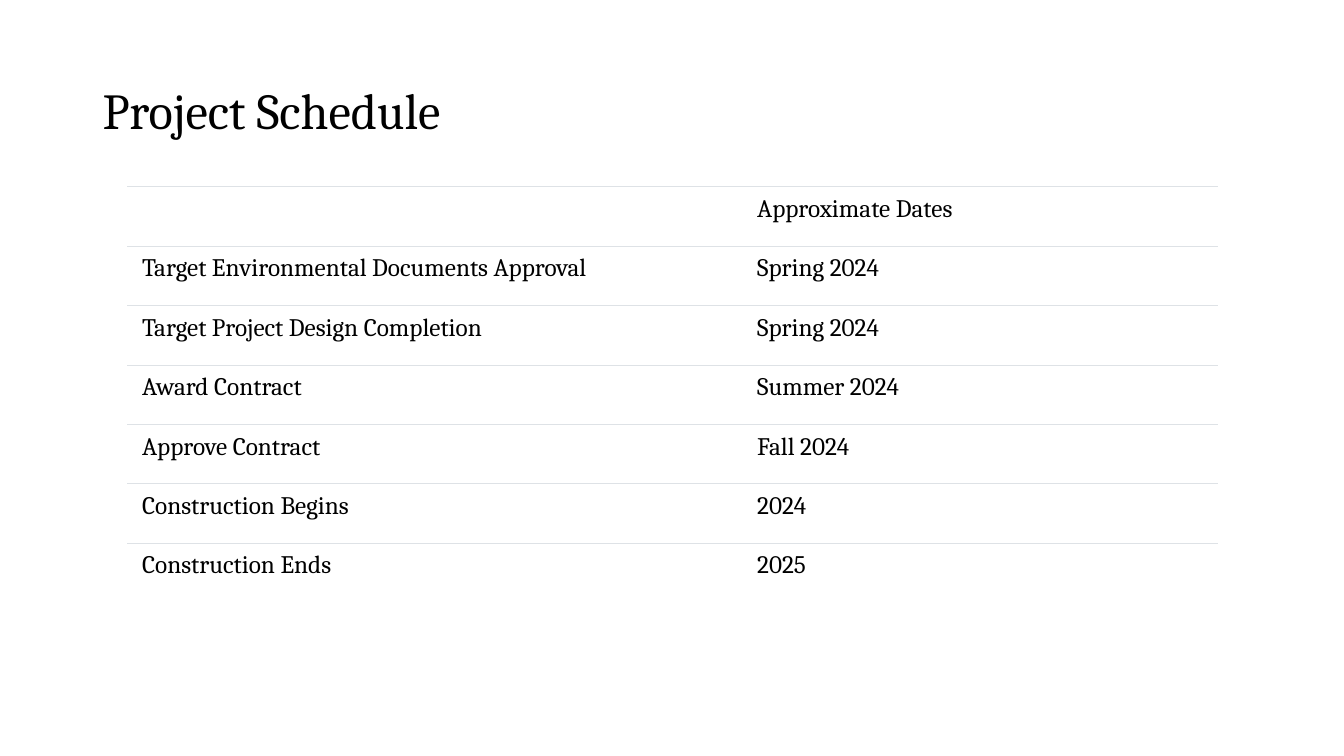
from lxml import etree
from pptx import Presentation
from pptx.dml.color import RGBColor
from pptx.enum.text import MSO_ANCHOR as Anchor
from pptx.oxml.ns import qn
from pptx.util import Inches, Pt

# Content
TITLE = "Project Schedule"
ROWS = [
    ("", "Approximate Dates"),
    ("Target Environmental Documents Approval", "Spring 2024"),
    ("Target Project Design Completion", "Spring 2024"),
    ("Award Contract", "Summer 2024"),
    ("Approve Contract", "Fall 2024"),
    ("Construction Begins", "2024"),
    ("Construction Ends", "2025"),
]

# Style
FONT = "Cambria"
BLACK = RGBColor(0x00, 0x00, 0x00)
WHITE = RGBColor(0xFF, 0xFF, 0xFF)
RULE = RGBColor(0xDE, 0xE2, 0xE6)
COLS = (6.1, 4.72)
ROW_H = 0.59


def style(para, size):
    for item in (para.font, *(run.font for run in para.runs)):
        item.name = FONT
        item.size = Pt(size)
        item.bold = False
        item.color.rgb = BLACK


def border(cell, side, color=None):
    props = cell._tc.get_or_add_tcPr()
    line = etree.SubElement(props, qn("a:ln" + side), w=str(Pt(0.5)))
    if color is None:
        etree.SubElement(line, qn("a:noFill"))
    else:
        fill = etree.SubElement(line, qn("a:solidFill"))
        etree.SubElement(fill, qn("a:srgbClr"), val=str(color))


deck = Presentation()
deck.slide_width, deck.slide_height = Inches(13.33), Inches(7.5)
slide = deck.slides.add_slide(deck.slide_layouts[6])

# Title
box = slide.shapes.add_textbox(
    Inches(0.92), Inches(0.4), Inches(11.5), Inches(1.45))
frame = box.text_frame
frame.word_wrap = True
frame.vertical_anchor = Anchor.MIDDLE
frame.text = TITLE
frame.paragraphs[0].line_spacing = 0.9
style(frame.paragraphs[0], 36)

# Schedule table
table = slide.shapes.add_table(
    len(ROWS), len(COLS), Inches(1.26), Inches(1.85),
    Inches(sum(COLS)), Inches(ROW_H * len(ROWS))).table
table.first_row = table.horz_banding = False
for col, width in zip(table.columns, COLS):
    col.width = Inches(width)

for r, texts in enumerate(ROWS):
    table.rows[r].height = Inches(ROW_H)
    for c, text in enumerate(texts):
        cell = table.cell(r, c)
        cell.text = text
        style(cell.text_frame.paragraphs[0], 18)
        cell.margin_left = cell.margin_right = Inches(0.15)
        cell.margin_top = cell.margin_bottom = Inches(0.08)
        # Rule above each row, none below the last
        border(cell, "L")
        border(cell, "R")
        border(cell, "T", RULE)
        border(cell, "B", RULE if r < len(ROWS) - 1 else None)
        cell.fill.solid()
        cell.fill.fore_color.rgb = WHITE

deck.save("out.pptx")
